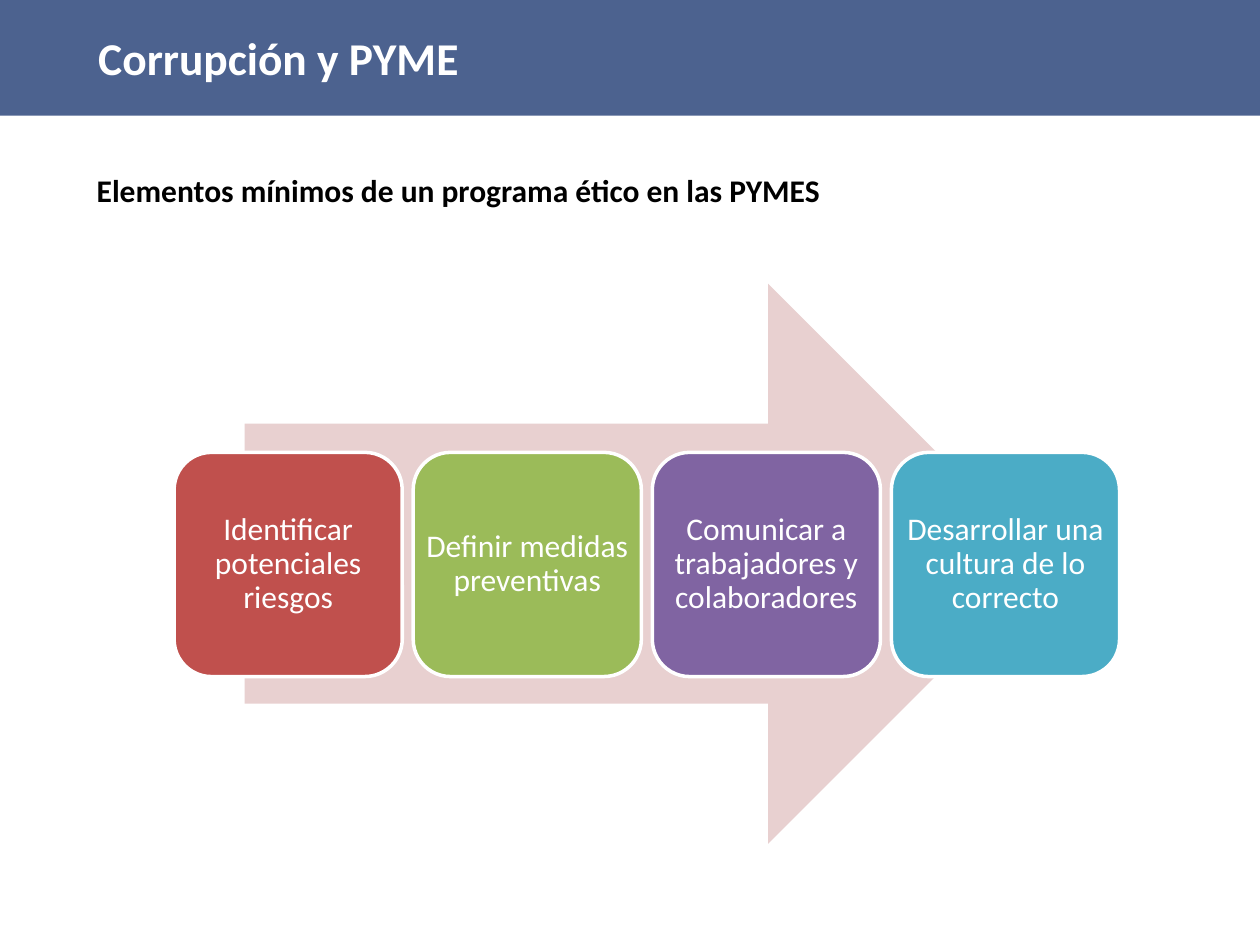
from dataclasses import dataclass

from lxml.etree import SubElement
from pptx import Presentation
from pptx.dml.color import RGBColor
from pptx.enum.shapes import MSO_SHAPE as Shape
from pptx.enum.text import MSO_ANCHOR as Anchor, MSO_AUTO_SIZE as AutoSize, PP_ALIGN as Align
from pptx.oxml.ns import qn
from pptx.util import Cm, Pt

COLORS = {
    "navy": "002060",
    "arrow": "E8D0D0",
    "red": "C0504D",
    "green": "9BBB59",
    "purple": "8064A2",
    "teal": "4BACC6",
    "white": "FFFFFF",
    "black": "000000",
}
FONT = "Calibri"
CARD_LEFT, CARD_TOP, CARD_WIDTH, CARD_HEIGHT, CARD_PITCH = 3.51, 9.12, 4.6, 4.52, 4.82


@dataclass(frozen=True)
class Step:
    text: str
    color: str


STEPS = [
    Step("Identificar potenciales riesgos", "red"),
    Step("Definir medidas preventivas", "green"),
    Step("Comunicar a trabajadores y colaboradores", "purple"),
    Step("Desarrollar una cultura de lo correcto", "teal"),
]


def rgb(name: str) -> RGBColor:
    return RGBColor.from_string(COLORS[name])


def set_fill(sp, color: str) -> None:
    sp.fill.solid()
    sp.fill.fore_color.rgb = rgb(color)


def set_text(sp, text: str, color: str, size: float, bold: bool = False,
             align=Align.LEFT, **frame_format) -> None:
    """Write one formatted paragraph; frame_format holds text frame attributes."""
    tf = sp.text_frame
    for name, value in {"word_wrap": True, **frame_format}.items():
        setattr(tf, name, value)
    p = tf.paragraphs[0]
    p.alignment = align
    r = p.add_run()
    r.text = text
    for name, value in {"name": FONT, "size": Pt(size), "bold": bold}.items():
        setattr(r.font, name, value)
    r.font.color.rgb = rgb(color)


def add_title(s, text: str) -> None:
    """Turn the title placeholder into the translucent band across the top."""
    sp = s.shapes.title
    sp.left, sp.top, sp.width, sp.height = Cm(0), Cm(0), Cm(25.4), Cm(2.33)
    set_fill(sp, "navy")
    color = sp.fill._xPr.find(qn("a:solidFill"))[0]
    SubElement(color, qn("a:alpha"), val="70000")
    set_text(sp, text, "white", 26, bold=True, margin_left=Cm(1.98),
             vertical_anchor=Anchor.MIDDLE, auto_size=AutoSize.NONE)


def add_subtitle(s, text: str) -> None:
    sp = s.shapes.add_textbox(Cm(1.7), Cm(3.33), Cm(20.6), Cm(1.02))
    set_text(sp, text, "black", 18, bold=True)


def add_arrow(s) -> None:
    sp = s.shapes.add_shape(Shape.RIGHT_ARROW, Cm(4.93), Cm(5.72), Cm(16.2), Cm(11.29))
    sp.shadow.inherit = False
    set_fill(sp, "arrow")
    sp.line.fill.background()


def add_step(s, step: Step, index: int) -> None:
    sp = s.shapes.add_shape(Shape.ROUNDED_RECTANGLE, Cm(CARD_LEFT + index * CARD_PITCH),
                            Cm(CARD_TOP), Cm(CARD_WIDTH), Cm(CARD_HEIGHT))
    sp.shadow.inherit = False
    set_fill(sp, step.color)
    sp.line.color.rgb = rgb("white")
    sp.line.width = Pt(2)
    margins = {f"margin_{side}": 0 for side in ("left", "top", "right", "bottom")}
    set_text(sp, step.text, "white", 18, align=Align.CENTER,
             vertical_anchor=Anchor.MIDDLE, **margins)
    sp.text_frame.paragraphs[0].line_spacing = 0.9


def main() -> None:
    prs = Presentation()
    prs.slide_width, prs.slide_height = Cm(25.4), Cm(19.05)
    s = prs.slides.add_slide(prs.slide_layouts[5])
    add_title(s, "Corrupción y PYME")
    add_subtitle(s, "Elementos mínimos de un programa ético en las PYMES")
    add_arrow(s)
    for index, step in enumerate(STEPS):
        add_step(s, step, index)
    prs.save("out.pptx")


if __name__ == "__main__":
    main()
